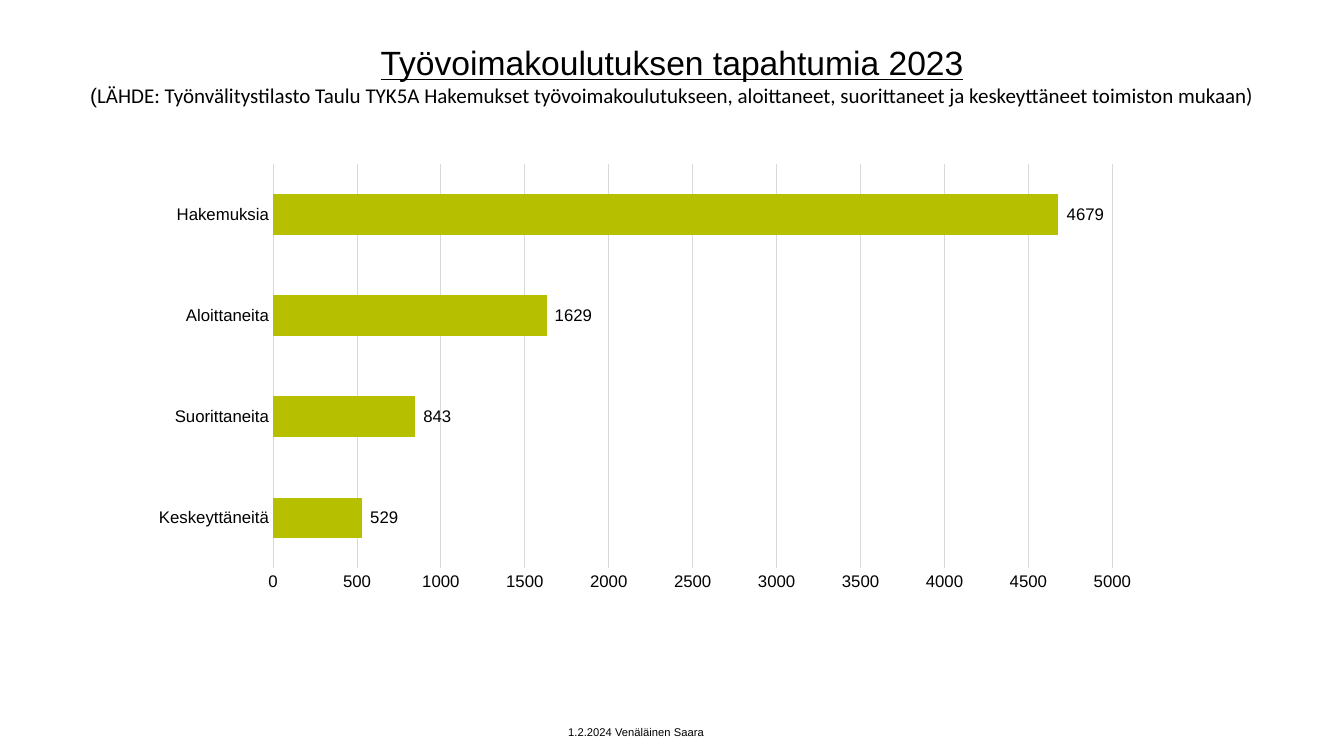
from lxml import etree
from pptx import Presentation
from pptx.chart.data import CategoryChartData
from pptx.dml.color import RGBColor
from pptx.enum.chart import XL_CHART_TYPE as ChartType, XL_LABEL_POSITION as LabelPos
from pptx.enum.chart import XL_TICK_MARK as Tick
from pptx.enum.text import MSO_ANCHOR as Anchor, PP_ALIGN as Align
from pptx.oxml.ns import qn
from pptx.util import Inches, Pt

TITLE = "Työvoimakoulutuksen tapahtumia 2023"
SOURCE = ("LÄHDE: Työnvälitystilasto Taulu TYK5A Hakemukset työvoimakoulutukseen, "
          "aloittaneet, suorittaneet ja keskeyttäneet toimiston mukaan)")
FOOTER = "1.2.2024 Venäläinen Saara"
EVENTS = {"Keskeyttäneitä": 529, "Suorittaneita": 843, "Aloittaneita": 1629, "Hakemuksia": 4679}
AXIS_MAX = 5000
PLOT = {"x": 0.162, "y": 0.06, "w": 0.754, "h": 0.76}
BLACK, GREY, GREEN = "000000", "D9D9D9", "B6BF00"
C15 = "http://schemas.microsoft.com/office/drawing/2012/chart"
LABEL_EXT = "{CE6537A1-D6FC-4f65-9D91-7224C49458BB}"


def set_font(font, size, name="Arial"):
    font.size, font.name = Pt(size), name
    font.color.rgb = RGBColor.from_string(BLACK)


def set_line(line, color):
    line.color.rgb = RGBColor.from_string(color)
    line.width = Pt(0.75)


def add_box(s, at, anchor, top=0.0):
    tf = s.shapes.add_textbox(*map(Inches, at)).text_frame
    tf.word_wrap = True
    tf.vertical_anchor = anchor
    tf.margin_left = tf.margin_right = tf.margin_bottom = 0
    tf.margin_top = Inches(top)
    tf.paragraphs[0].alignment = Align.CENTER
    return tf


def make_layout(values):
    """Return a c:layout element holding the given manual layout values."""
    layout = etree.Element(qn("c:layout"))
    manual = etree.SubElement(layout, qn("c:manualLayout"))
    for tag, val in values.items():
        etree.SubElement(manual, qn("c:" + tag)).set("val", str(val))
    return layout


def hide_leader_lines(labels):
    """Turn off the lines between moved labels and their bars."""
    for old in labels.findall(qn("c:showLeaderLines")):
        labels.remove(old)
    etree.SubElement(labels, qn("c:showLeaderLines")).set("val", "0")
    ext = etree.SubElement(etree.SubElement(labels, qn("c:extLst")), qn("c:ext"))
    ext.set("uri", LABEL_EXT)
    lines = etree.SubElement(ext, f"{{{C15}}}showLeaderLines", nsmap={"c15": C15})
    lines.set("val", "0")


def add_title(s):
    tf = add_box(s, (0.76, 0.36, 11.81, 1.02), Anchor.TOP, 0.06)
    p = tf.paragraphs[0]
    p.text = TITLE + "\v"
    set_font(p.runs[0].font, 24)
    p.runs[0].font.underline = True
    for text, name in (("(", "Arial"), (SOURCE, "Calibri")):
        r = p.add_run()
        r.text = text
        set_font(r.font, 15, name)


def add_events_chart(s):
    data = CategoryChartData()
    data.categories = list(EVENTS)
    data.add_series("Series 1", list(EVENTS.values()))
    at = map(Inches, (0.92, 1.31, 11.04, 5.28))
    chart = s.shapes.add_chart(ChartType.BAR_STACKED, *at, data).chart
    chart.has_legend = chart.has_title = False
    set_font(chart.font, 10)

    for axis in (chart.category_axis, chart.value_axis):
        axis.major_tick_mark = axis.minor_tick_mark = Tick.NONE
        set_font(axis.tick_labels.font, 12)
    chart.category_axis.has_major_gridlines = False
    set_line(chart.category_axis.format.line, GREY)
    value_axis = chart.value_axis
    value_axis.minimum_scale, value_axis.maximum_scale = 0, AXIS_MAX
    value_axis.major_unit = 500
    value_axis.has_major_gridlines = True
    value_axis.format.line.fill.background()
    set_line(value_axis.major_gridlines.format.line, GREY)

    plot = chart.plots[0]
    plot.gap_width, plot.overlap = 150, 100
    plot.vary_by_categories = False
    bars = plot.series[0]
    bars.format.fill.solid()
    bars.format.fill.fore_color.rgb = RGBColor.from_string(GREEN)
    bars.data_labels.show_value = True
    bars.data_labels.position = LabelPos.CENTER
    set_font(bars.data_labels.font, 12)
    for i in range(len(EVENTS)):
        label = bars.points[i].data_label
        set_font(label.font, 12)
        label.position = LabelPos.CENTER

    # Each label moves from the bar's centre to just past its end
    labels = chart.element.find(".//" + qn("c:dLbls"))
    for label, value in zip(labels.findall(qn("c:dLbl")), EVENTS.values()):
        shift = PLOT["w"] * value / AXIS_MAX / 2 + 0.004 * len(str(value)) + 0.008
        label.insert(1, make_layout({"x": round(shift, 3), "y": 0}))
    hide_leader_lines(labels)

    area = chart.element.find(".//" + qn("c:plotArea"))
    for old in area.findall(qn("c:layout")):
        area.remove(old)
    modes = {"layoutTarget": "inner", "xMode": "edge", "yMode": "edge"}
    area.insert(0, make_layout(modes | PLOT))


def add_footer(s):
    p = add_box(s, (2.86, 7.16, 6.9, 0.21), Anchor.MIDDLE).paragraphs[0]
    p.text = FOOTER
    p.space_after = Pt(6)
    set_font(p.runs[0].font, 8)


def main():
    prs = Presentation()
    prs.slide_width, prs.slide_height = Inches(13.33), Inches(7.5)
    s = prs.slides.add_slide(prs.slide_layouts[6])
    add_title(s)
    add_footer(s)
    add_events_chart(s)
    prs.save("out.pptx")


if __name__ == "__main__":
    main()
